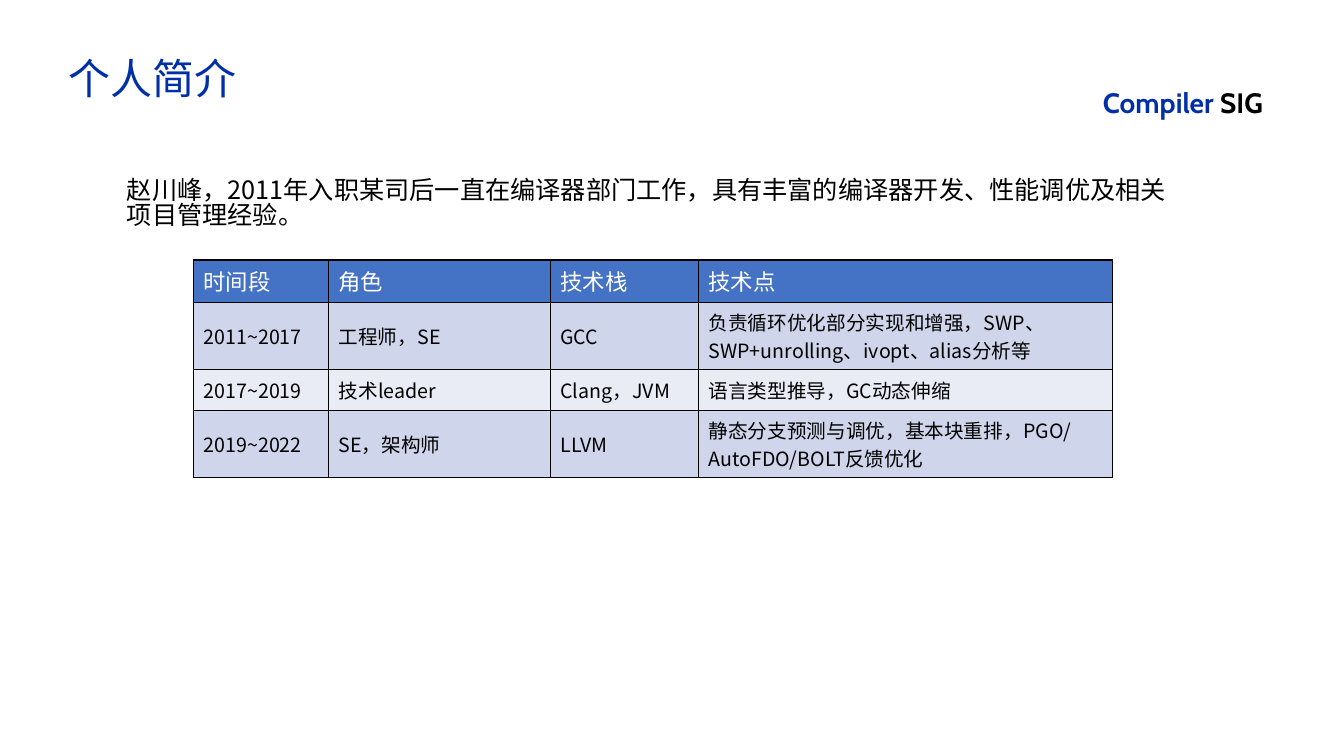
from dataclasses import dataclass

from lxml.etree import SubElement
from pptx import Presentation
from pptx.dml.color import RGBColor
from pptx.enum.text import MSO_ANCHOR
from pptx.oxml.ns import qn
from pptx.util import Inches, Pt

CJK = "Noto Sans CJK SC"
BLUE, BLACK, WHITE = "002FA7", "000000", "FFFFFF"
HEADER_FILL, BAND_FILLS = "4472C4", ("CFD5EA", "E9EBF5")
WIDTH, HEIGHT = Inches(13.33), Inches(7.5)


@dataclass(frozen=True)
class Label:
    place: tuple[float, float, float, float]
    runs: tuple[tuple[str, str], ...]
    size: int
    font: str = CJK
    bold: bool = False
    anchor: MSO_ANCHOR = MSO_ANCHOR.TOP
    spacing: float = 1.0


@dataclass(frozen=True)
class Career:
    period: str
    role: str
    stack: str
    topics: str
    height: float

    def texts(self) -> tuple[str, ...]:
        return self.period, self.role, self.stack, self.topics


LABELS = (
    Label((81.32, 10.67, 14.63, 5.87), (("Compiler", BLUE), (" SIG", BLACK)),
          20, font="Cabin", bold=True),
    Label((4.35, 6.93, 72.92, 7.47), (("个人简介", BLUE),), 30,
          anchor=MSO_ANCHOR.MIDDLE, spacing=0.9),
    Label((8.7, 23.07, 79.74, 9.47),
          (("赵川峰，2011年入职某司后一直在编译器部门工作，具有丰富的编译器开发、"
            "性能调优及相关项目管理经验。", BLACK),), 18, spacing=0.83),
)
CAREERS = (
    Career("时间段", "角色", "技术栈", "技术点", 5.6),
    Career("2011~2017", "工程师，SE", "GCC",
           "负责循环优化部分实现和增强，SWP、SWP+unrolling、ivopt、alias分析等", 8.93),
    Career("2017~2019", "技术leader", "Clang，JVM", "语言类型推导，GC动态伸缩", 5.33),
    Career("2019~2022", "SE，架构师", "LLVM",
           "静态分支预测与调优，基本块重排，PGO/AutoFDO/BOLT反馈优化", 8.93),
)
TABLE_LEFT, TABLE_TOP = 14.4, 34.4
COLUMN_SHARES = (10.05, 16.5, 11.03, 30.83)


def across(share: float) -> int:
    return round(WIDTH * share / 100)


def down(share: float) -> int:
    return round(HEIGHT * share / 100)


def paint(target, color: str) -> None:
    target.fill.solid()
    target.fill.fore_color.rgb = RGBColor.from_string(color)


def write(paragraph, text: str, *, size: int, color: str, font: str = CJK,
          bold: bool = False) -> None:
    run = paragraph.add_run()
    run.text = text
    run.font.size = Pt(size)
    run.font.bold = bold
    run.font.name = font
    paint(run.font, color)
    SubElement(run.font._element, qn("a:ea"), typeface=font)


def draw_label(slide, label: Label) -> None:
    left, top, width, height = label.place
    frame = slide.shapes.add_textbox(
        across(left), down(top), across(width), down(height)).text_frame
    frame.word_wrap = True
    frame.vertical_anchor = label.anchor
    paragraph = frame.paragraphs[0]
    paragraph.line_spacing = label.spacing
    for text, color in label.runs:
        write(paragraph, text, size=label.size, color=color,
              font=label.font, bold=label.bold)


def outline(cell) -> None:
    properties = cell._tc.get_or_add_tcPr()
    for side in ("lnL", "lnR", "lnT", "lnB"):
        edge = SubElement(properties, qn(f"a:{side}"), w=str(Pt(1)))
        SubElement(SubElement(edge, qn("a:solidFill")), qn("a:srgbClr"), val=BLACK)


def draw_careers(slide) -> None:
    table = slide.shapes.add_table(
        len(CAREERS), len(COLUMN_SHARES), across(TABLE_LEFT), down(TABLE_TOP),
        across(sum(COLUMN_SHARES)), down(sum(c.height for c in CAREERS))).table
    for column, share in zip(table.columns, COLUMN_SHARES):
        column.width = across(share)
    for index, (row, career) in enumerate(zip(table.rows, CAREERS)):
        row.height = down(career.height)
        header = index == 0
        for cell, text in zip(row.cells, career.texts()):
            outline(cell)
            paint(cell, HEADER_FILL if header else BAND_FILLS[(index - 1) % 2])
            cell.vertical_anchor = MSO_ANCHOR.TOP if header else MSO_ANCHOR.MIDDLE
            write(cell.text_frame.paragraphs[0], text,
                  size=16 if header else 14, color=WHITE if header else BLACK)


def main() -> None:
    """Build the personal introduction slide."""
    deck = Presentation()
    deck.slide_width, deck.slide_height = WIDTH, HEIGHT
    slide = deck.slides.add_slide(deck.slide_layouts[6])
    for label in LABELS:
        draw_label(slide, label)
    draw_careers(slide)
    deck.save("out.pptx")


if __name__ == "__main__":
    main()
